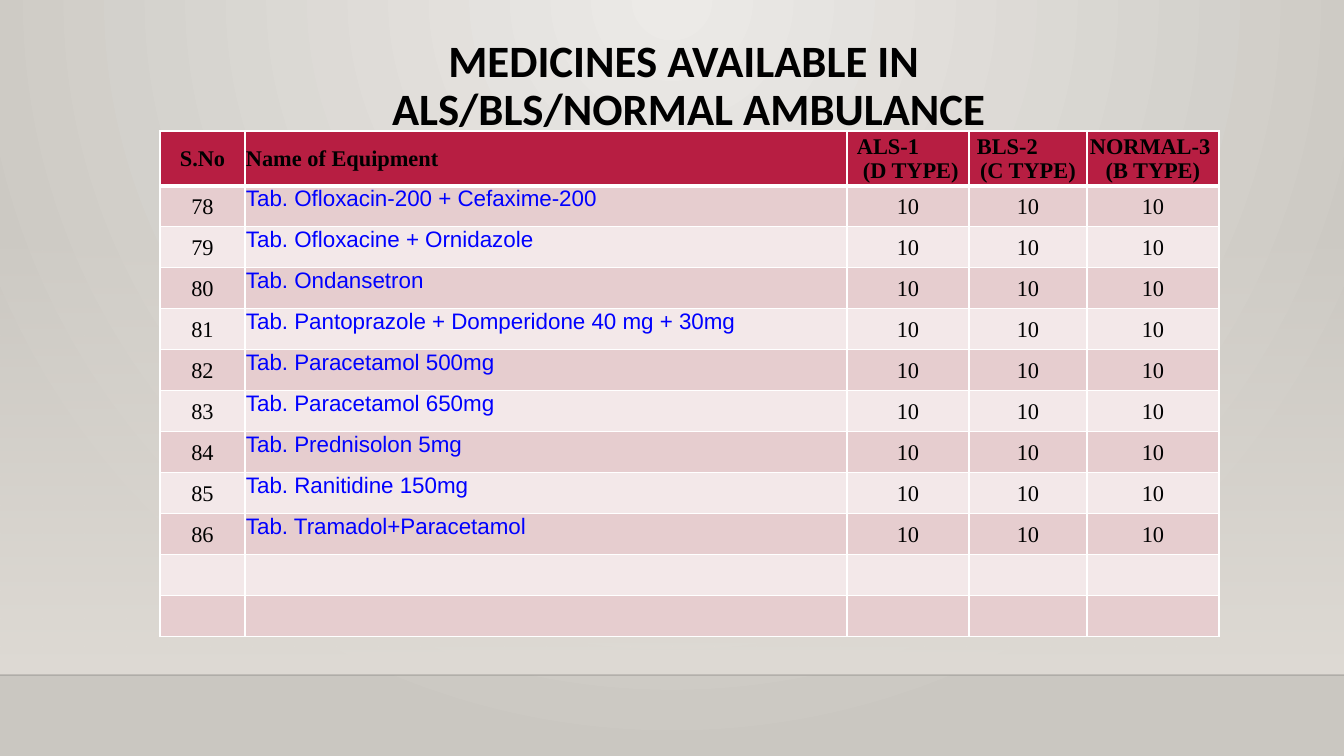
from lxml import etree
from pptx import Presentation
from pptx.dml.color import RGBColor
from pptx.enum.shapes import MSO_CONNECTOR, MSO_SHAPE
from pptx.enum.text import MSO_ANCHOR, PP_ALIGN
from pptx.oxml.ns import qn
from pptx.util import Emu, Pt

SLIDE_WIDTH, SLIDE_HEIGHT = 1344, 756
SCALE = 12192000 / SLIDE_WIDTH

STRAIGHT = MSO_CONNECTOR.STRAIGHT
RECTANGLE = MSO_SHAPE.RECTANGLE
MIDDLE, TOP = MSO_ANCHOR.MIDDLE, MSO_ANCHOR.TOP
CENTER, LEFT = PP_ALIGN.CENTER, PP_ALIGN.LEFT

BLACK = RGBColor(0x00, 0x00, 0x00)
FLOOR_LINE = RGBColor(0x00, 0x00, 0x01)
WHITE = RGBColor(0xFF, 0xFF, 0xFF)
BLUE = RGBColor(0x00, 0x00, 0xFF)
CRIMSON = RGBColor(0xB7, 0x1E, 0x42)
ROSE = RGBColor(0xE6, 0xCD, 0xCF)
PALE_ROSE = RGBColor(0xF3, 0xE8, 0xE9)
LIGHT_STONE = RGBColor(0xEC, 0xEA, 0xE7)
DARK_STONE = RGBColor(0xCA, 0xC7, 0xC1)
STONE = RGBColor(0xDF, 0xDB, 0xD5)

COLUMN_WIDTHS = [85, 602, 122, 118, 132]
HEADER_HEIGHT, ROW_HEIGHT = 51, 41
HEADERS = ["S.No", "Name of Equipment", "ALS-1\n (D TYPE)", "BLS-2\n(C TYPE)", "NORMAL-3 \n(B TYPE)"]
HEADER_INDENTS = {2: 9, 3: 7}
FIRST_NUMBER = 78
QUANTITY = "10"
MEDICINES = [
    "Tab. Ofloxacin-200 + Cefaxime-200",
    "Tab. Ofloxacine + Ornidazole",
    "Tab. Ondansetron",
    "Tab. Pantoprazole + Domperidone 40 mg + 30mg",
    "Tab. Paracetamol 500mg",
    "Tab. Paracetamol 650mg",
    "Tab. Prednisolon 5mg",
    "Tab. Ranitidine 150mg",
    "Tab. Tramadol+Paracetamol",
]
EMPTY_ROWS = 2


def px(length):
    """Turn a length in px into EMU."""
    return Emu(round(length * SCALE))


def add_element(parent, tag, **attributes):
    """Append a DrawingML element to its parent."""
    return etree.SubElement(parent, qn(tag), attributes)


def set_gradient(fill, colors):
    """Make a two-stop gradient running from top to bottom."""
    fill.gradient()
    fill.gradient_angle = 270
    for stop, color, position in zip(fill.gradient_stops, colors, (0, 1)):
        stop.color.rgb = color
        stop.position = position


def add_backdrop(slide, horizon, floor):
    """Paint the radial background, the fading wall and the floor line."""
    set_gradient(slide.background.fill, (LIGHT_STONE, DARK_STONE))
    gradient = slide.element.find(".//" + qn("a:gradFill"))
    gradient.remove(gradient.find(qn("a:lin")))
    circle = etree.Element(qn("a:path"), {"path": "circle"})
    add_element(circle, "a:fillToRect", l="43000", t="0", r="43000", b="100000")
    gradient.find(qn("a:gsLst")).addnext(circle)

    wall = slide.shapes.add_shape(RECTANGLE, 0, px(horizon), px(SLIDE_WIDTH), px(floor - horizon))
    wall.shadow.inherit = False
    wall.line.fill.background()
    set_gradient(wall.fill, (STONE, STONE))
    add_element(wall.element.find(".//" + qn("a:srgbClr")), "a:alpha", val="0")

    line = slide.shapes.add_connector(STRAIGHT, 0, px(floor), px(SLIDE_WIDTH), px(floor))
    line.line.color.rgb = FLOOR_LINE
    line.line.width = Pt(1)
    add_element(line.element.find(".//" + qn("a:srgbClr")), "a:alpha", val="20000")
    add_element(line.element.spPr, "a:effectLst")


def add_title(slide, left, top, width, height):
    """Write the two-line heading in its box."""
    box = slide.shapes.add_textbox(px(left), px(top), px(width), px(height))
    frame = box.text_frame
    frame.word_wrap = True
    frame.vertical_anchor = MIDDLE
    paragraph = frame.paragraphs[0]
    paragraph.text = "MEDICINES AVAILABLE IN \vALS/BLS/NORMAL AMBULANCE"
    paragraph.alignment = CENTER
    paragraph.line_spacing = 0.9
    for run in paragraph.runs:
        run.font.name = "Calibri"
        run.font.size = Pt(32)
        run.font.bold = True
        run.font.color.rgb = BLACK


def style_cell(cell, color, bottom_width):
    """Give a cell white borders and a solid fill."""
    properties = cell._tc.get_or_add_tcPr()
    for side, width in (("L", 1), ("R", 1), ("T", 1), ("B", bottom_width)):
        border = add_element(properties, "a:ln" + side, w=str(Pt(width)))
        solid = add_element(border, "a:solidFill")
        add_element(solid, "a:srgbClr", val=str(WHITE))
    cell.fill.solid()
    cell.fill.fore_color.rgb = color


def write_cell(cell, text, alignment, font_name, color, bold=False):
    """Write text into a cell with tight margins."""
    cell.margin_left = cell.margin_right = cell.margin_top = px(1)
    cell.margin_bottom = 0
    cell.vertical_anchor = MIDDLE
    cell.text_frame.text = text
    for paragraph in cell.text_frame.paragraphs:
        paragraph.alignment = alignment
        for run in paragraph.runs:
            run.font.name = font_name
            run.font.size = Pt(16)
            run.font.bold = bold
            run.font.color.rgb = color


def add_medicine_table(slide, left, top):
    """Lay out the medicine list with its quantities."""
    row_count = 1 + len(MEDICINES) + EMPTY_ROWS
    height = HEADER_HEIGHT + ROW_HEIGHT * (row_count - 1)
    table = slide.shapes.add_table(
        row_count, len(COLUMN_WIDTHS), px(left), px(top), px(sum(COLUMN_WIDTHS)), px(height)
    ).table
    for column, width in zip(table.columns, COLUMN_WIDTHS):
        column.width = px(width)
    for index, row in enumerate(table.rows):
        row.height = px(ROW_HEIGHT if index else HEADER_HEIGHT)
        color = (ROSE if index % 2 else PALE_ROSE) if index else CRIMSON
        for cell in row.cells:
            style_cell(cell, color, 1 if index else 3)

    for column, header in enumerate(HEADERS):
        cell = table.cell(0, column)
        write_cell(cell, header, LEFT if column == 1 else CENTER, "Times New Roman", BLACK, True)
        if column in HEADER_INDENTS:
            paragraph = cell.text_frame.paragraphs[0]
            paragraph.alignment = LEFT
            paragraph._p.get_or_add_pPr().set("marL", str(px(HEADER_INDENTS[column])))

    for row, medicine in enumerate(MEDICINES, start=1):
        name_cell = table.cell(row, 1)
        write_cell(name_cell, medicine, LEFT, "Arial", BLUE)
        name_cell.vertical_anchor = TOP
        write_cell(table.cell(row, 0), str(FIRST_NUMBER + row - 1), CENTER, "Times New Roman", BLACK)
        for column in range(2, len(COLUMN_WIDTHS)):
            write_cell(table.cell(row, column), QUANTITY, CENTER, "Times New Roman", BLACK)


def main():
    """Build and save the medicine slide."""
    presentation = Presentation()
    presentation.slide_width = px(SLIDE_WIDTH)
    presentation.slide_height = px(SLIDE_HEIGHT)
    slide = presentation.slides.add_slide(presentation.slide_layouts[6])
    add_backdrop(slide, 223, 675)
    add_title(slide, 160, 29, 1058, 116)
    add_medicine_table(slide, 160, 131)
    presentation.save("out.pptx")


if __name__ == "__main__":
    main()
